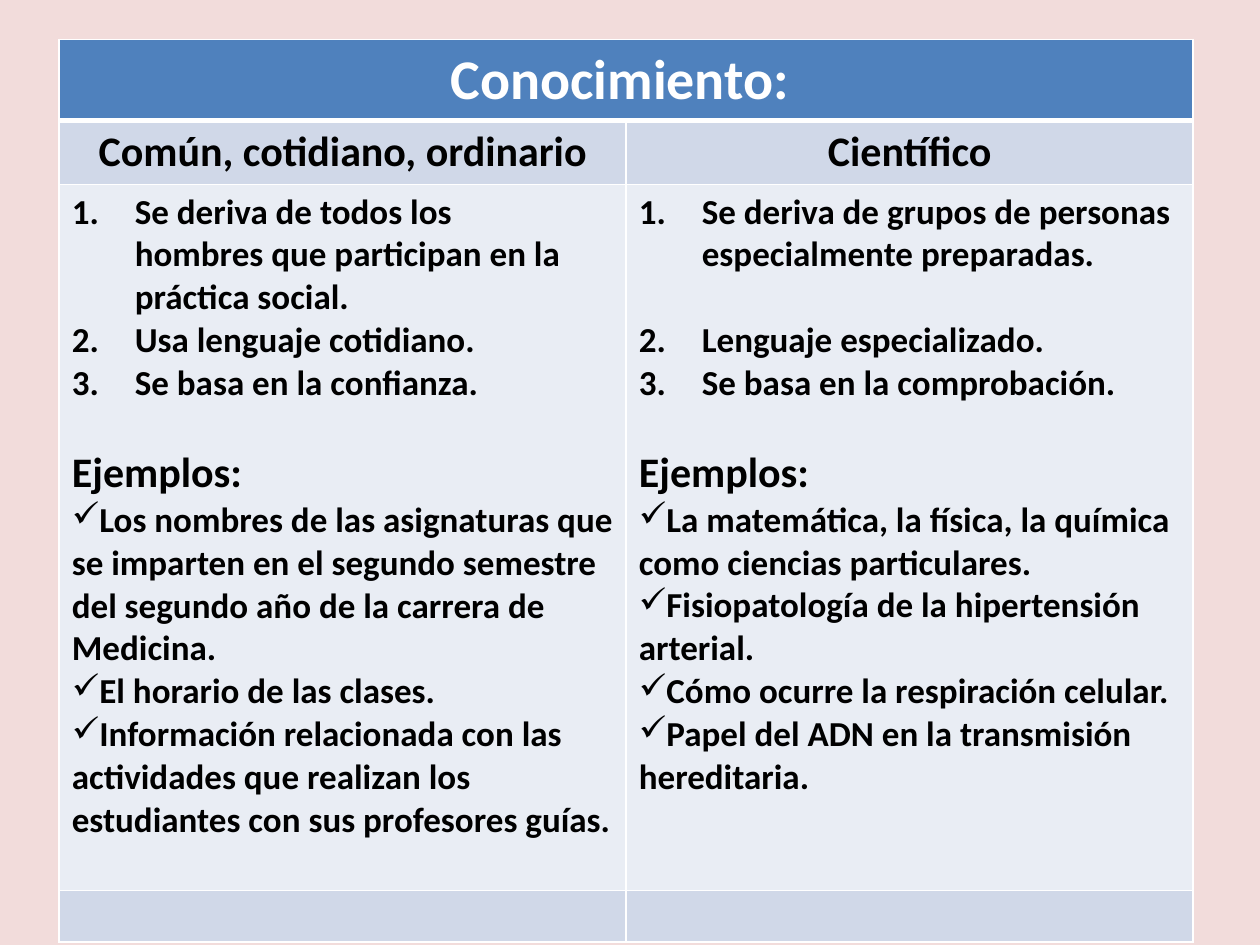
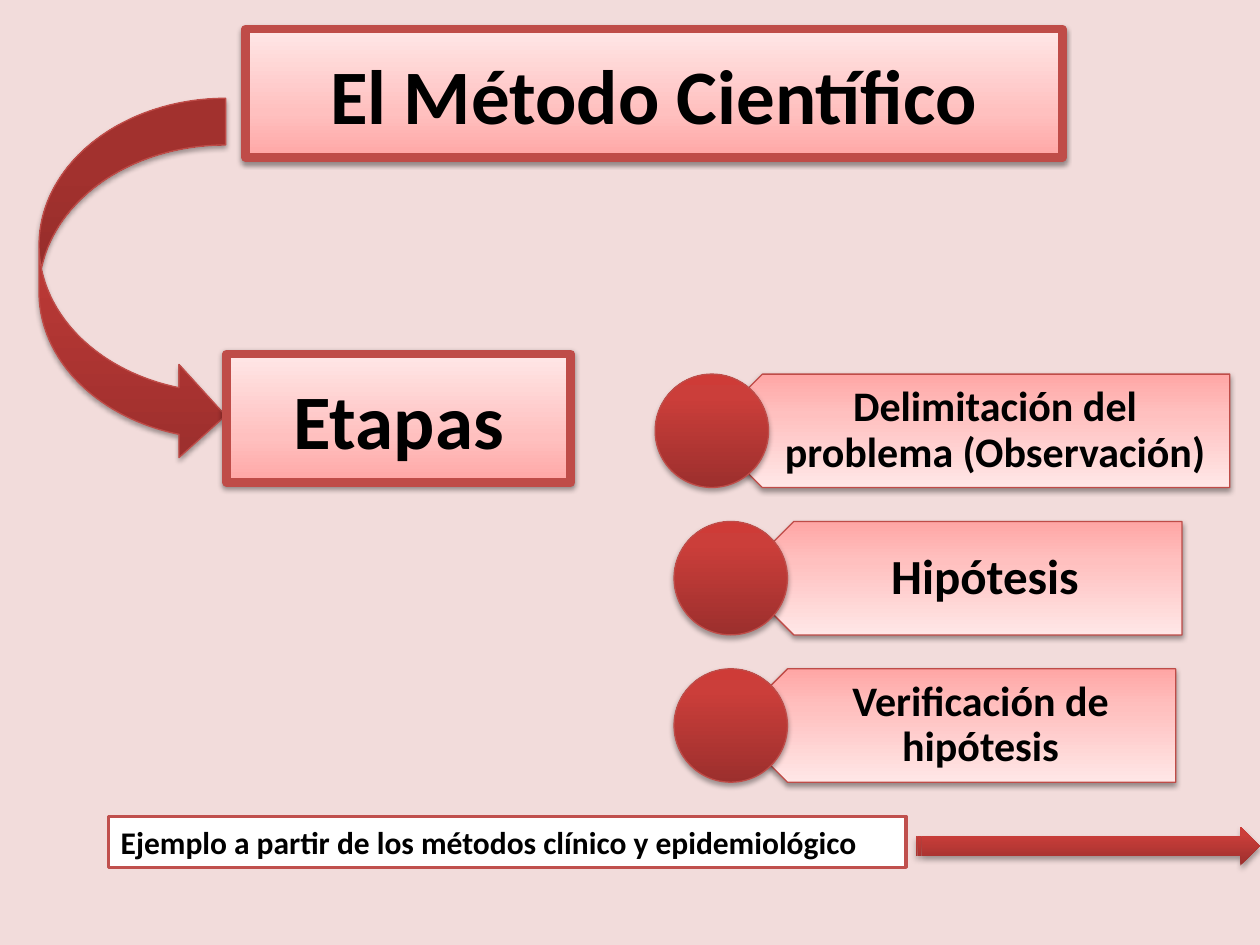
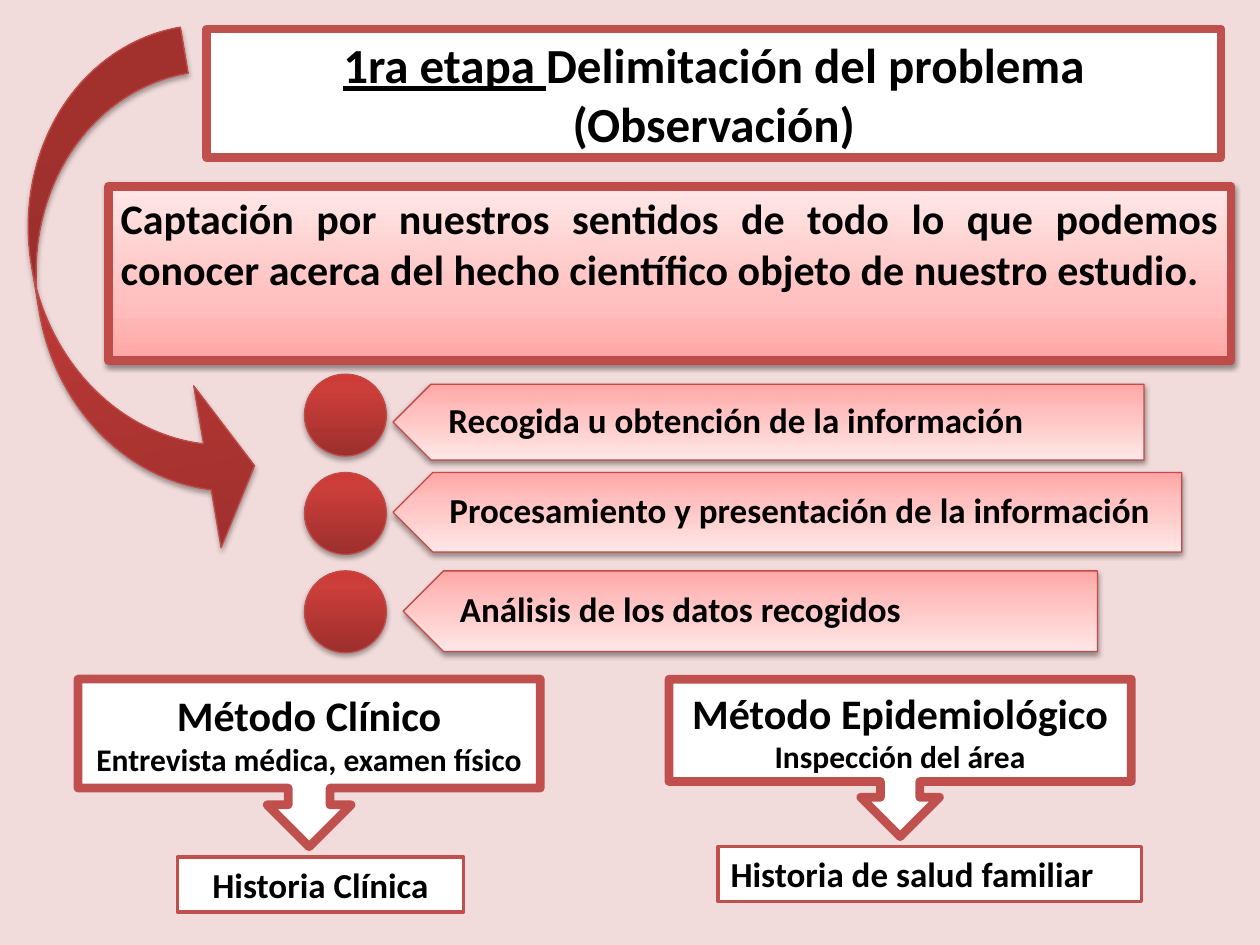
from lxml.etree import SubElement
from pptx import Presentation
from pptx.dml.color import RGBColor
from pptx.enum.shapes import MSO_SHAPE
from pptx.enum.text import MSO_ANCHOR, MSO_AUTO_SIZE, PP_ALIGN
from pptx.oxml.ns import qn
from pptx.util import Pt

COLORS = {
    "background": "F2DCDB", "text": "000000", "white": "FFFFFF",
    "edge": "BF4C48", "accent": "C0504D",
    "header": "4F81BD", "band": "D0D8E8", "body": "E9EDF4",
}
GRADIENTS = {
    "soft": [(0, "FFA6A5"), (35, "FFC0BF"), (100, "FFE7E7")],
    "deep": [(0, "9C2F2D"), (80, "CB3E3A"), (100, "CE3B37")],
}
SHADOWS = {"soft": (38, 1.6), "deep": (35, 1.8)}
FONT = "Calibri"
TITLE_ONLY, BLANK = 5, 6
LINE_GAP = 24.4


def rgb(name):
    return RGBColor.from_string(COLORS[name])


class Deck:
    """Holds the shared style and the slide being built."""

    def __init__(self):
        self.presentation = Presentation()
        self.presentation.slide_width = Pt(720)
        self.presentation.slide_height = Pt(540)
        fill = self.presentation.slide_master.background.fill
        fill.solid()
        fill.fore_color.rgb = rgb("background")
        self.slide = None

    def new_slide(self, layout):
        layouts = self.presentation.slide_layouts
        self.slide = self.presentation.slides.add_slide(layouts[layout])

    def set_text(self, frame, text, sizes, align=PP_ALIGN.CENTER, color="text"):
        frame.text = text
        for paragraph, size in zip(frame.paragraphs, sizes):
            paragraph.alignment = align
            self.format_runs(paragraph, size, color)

    def format_runs(self, paragraph, size, color="text"):
        for run in paragraph.runs:
            run.font.name = FONT
            run.font.size = Pt(size)
            run.font.bold = True
            run.font.color.rgb = rgb(color)

    def paint(self, shape, look, line):
        shape.shadow.inherit = False
        if look in GRADIENTS:
            self.paint_gradient(shape, look)
        else:
            shape.fill.solid()
            shape.fill.fore_color.rgb = rgb(look)
        if line:
            shape.line.color.rgb = rgb("edge" if look in GRADIENTS else "accent")
            shape.line.width = Pt(line)
        else:
            shape.line.fill.background()

    def paint_gradient(self, shape, look):
        shape.fill.gradient()
        shape.fill.gradient_angle = 90
        properties = shape._element.spPr
        stops = properties.find(qn("a:gradFill")).find(qn("a:gsLst"))
        for stop in list(stops):
            stops.remove(stop)
        for position, color in GRADIENTS[look]:
            stop = SubElement(stops, qn("a:gs"), pos=str(position * 1000))
            SubElement(stop, qn("a:srgbClr"), val=color)
        opacity, distance = SHADOWS[look]
        shadow = SubElement(
            properties.find(qn("a:effectLst")), qn("a:outerShdw"),
            blurRad=str(Pt(3.1)), dist=str(Pt(distance)), dir="5400000", rotWithShape="0")
        color = SubElement(shadow, qn("a:srgbClr"), val=COLORS["text"])
        SubElement(color, qn("a:alpha"), val=str(opacity * 1000))

    def title(self, text, box, size, look, lead=""):
        shape = self.slide.shapes.title
        shape.left, shape.top, shape.width, shape.height = map(Pt, box)
        self.paint(shape, look, 5)
        frame = shape.text_frame
        frame.auto_size = MSO_AUTO_SIZE.NONE
        frame.vertical_anchor = MSO_ANCHOR.MIDDLE
        self.set_text(frame, lead or text, [size])
        if lead:
            paragraph = frame.paragraphs[0]
            paragraph.runs[0].font.underline = True
            paragraph.add_run().text = text
            self.format_runs(paragraph, size)

    def shape(self, kind, box, look, line=0.75, rotation=0, adjustments=()):
        shape = self.slide.shapes.add_shape(kind, *map(Pt, box))
        shape.rotation = rotation
        for index, value in enumerate(adjustments):
            shape.adjustments[index] = value
        self.paint(shape, look, line)
        return shape

    def panel(self, text, box, sizes, look="white", line=2, align=PP_ALIGN.CENTER,
              anchor=MSO_ANCHOR.TOP, kind=MSO_SHAPE.RECTANGLE):
        frame = self.shape(kind, box, look, line).text_frame
        frame.word_wrap = True
        frame.vertical_anchor = anchor
        self.set_text(frame, text, sizes, align)

    def tag(self, text, box, ball, size, align):
        left, top, width, height = box
        diameter = ball[2]
        self.shape(MSO_SHAPE.PENTAGON, box, "soft", rotation=180)
        tip = height / 4
        text_box = self.slide.shapes.add_textbox(
            Pt(left + tip), Pt(top), Pt(width - tip), Pt(height))
        frame = text_box.text_frame
        frame.word_wrap = True
        frame.vertical_anchor = MSO_ANCHOR.MIDDLE
        frame.margin_left = Pt(diameter * 0.445)
        frame.margin_right = Pt(size * 0.57)
        self.set_text(frame, text, [size], align)
        frame.paragraphs[0].line_spacing = 0.9
        self.shape(MSO_SHAPE.OVAL, (*ball, diameter), "deep")

    def table(self, box, row_heights, columns):
        table = self.slide.shapes.add_table(
            len(row_heights), columns, *map(Pt, box)).table
        for row, height in zip(table.rows, row_heights):
            row.height = Pt(height)
        return table

    def paint_cell(self, cell, fill, top=1, bottom=1):
        properties = cell._tc.get_or_add_tcPr()
        for side, width in (("L", 1), ("R", 1), ("T", top), ("B", bottom)):
            border = SubElement(properties, qn(f"a:ln{side}"), w=str(Pt(width)))
            solid = SubElement(border, qn("a:solidFill"))
            SubElement(solid, qn("a:srgbClr"), val=COLORS["white"])
        cell.fill.solid()
        cell.fill.fore_color.rgb = rgb(fill)

    def fill_list(self, frame, items):
        sizes = [24 if kind == "heading" else 20 for kind, _, _ in items]
        self.set_text(frame, "\n".join(text for _, text, _ in items), sizes, PP_ALIGN.LEFT)
        for paragraph, (kind, _, gap) in zip(frame.paragraphs, items):
            paragraph.space_before = Pt(gap)
            properties = paragraph._p.get_or_add_pPr()
            indent = Pt(36) if kind == "number" else 0
            properties.set("marL", str(indent))
            properties.set("indent", str(-indent))
            if kind == "number":
                SubElement(properties, qn("a:buAutoNum"), type="arabicPeriod")
            elif kind == "check":
                SubElement(properties, qn("a:buChar"), char="✓")


def build_knowledge(deck):
    deck.new_slide(BLANK)
    common = [
        ("number", "Se deriva de todos los\vhombres que participan en la práctica social.", 0),
        ("number", "Usa lenguaje cotidiano.", 0),
        ("number", "Se basa en la confianza.", 0),
        ("heading", "Ejemplos:", LINE_GAP),
        ("check", "Los nombres de las asignaturas que se imparten en el segundo "
                  "semestre del segundo año de la carrera de Medicina.", 0),
        ("check", "El horario de las clases.", 0),
        ("check", "Información relacionada con las actividades que realizan los "
                  "estudiantes con sus profesores guías.", 0),
    ]
    scientific = [
        ("number", "Se deriva de grupos de personas especialmente preparadas.", 0),
        ("number", "Lenguaje especializado.", LINE_GAP),
        ("number", "Se basa en la comprobación.", 0),
        ("heading", "Ejemplos:", LINE_GAP),
        ("check", "La matemática, la física, la química como ciencias particulares.", 0),
        ("check", "Fisiopatología de la hipertensión arterial.", 0),
        ("check", "Cómo ocurre la respiración celular.", 0),
        ("check", "Papel del ADN en la transmisión hereditaria.", 0),
    ]
    table = deck.table((33.84, 22.5, 648, 515.5), (46, 36.5, 403.5, 29.5), 2)
    for index, fill in enumerate(("header", "band", "body", "band")):
        for cell in table.rows[index].cells:
            deck.paint_cell(cell, fill, top=3 if index == 1 else 1,
                            bottom=3 if index == 0 else 1)
    table.cell(0, 0).merge(table.cell(0, 1))
    deck.set_text(table.cell(0, 0).text_frame, "Conocimiento: ", [32], color="white")
    headings = ("Común, cotidiano, ordinario", "Científico")
    for column, (heading, items) in enumerate(zip(headings, (common, scientific))):
        deck.set_text(table.cell(1, column).text_frame, heading, [24])
        deck.fill_list(table.cell(2, column).text_frame, items)


def build_method(deck):
    deck.new_slide(TITLE_ONLY)
    deck.title("El Método Científico", (140.4, 16.6, 466.6, 73.4), 44, "soft")
    stages = (
        ("Delimitación del problema (Observación)", 403.2, 299.5, 374.4, 24),
        ("Hipótesis", 421.2, 254.2, 385.2, 28),
        ("Verificación de hipótesis", 417.6, 254.2, 385.2, 24),
    )
    for index, (text, left, width, ball_left, size) in enumerate(stages):
        top = 213.8 + 84.2 * index
        deck.tag(text, (left, top, width, 64.8), (ball_left, top, 64.8), size,
                 PP_ALIGN.CENTER)
    deck.shape(MSO_SHAPE.CURVED_RIGHT_ARROW, (22.3, 56.2, 106.6, 208), "deep",
               adjustments=(0.25, 0.5, 0.25))
    deck.panel("Etapas", (129.6, 202.3, 196.6, 73.4), [44], "soft", 5,
               anchor=MSO_ANCHOR.MIDDLE)
    deck.panel("Ejemplo a partir de los métodos clínico y epidemiológico",
               (61.9, 466.6, 455.8, 29), [18], align=PP_ALIGN.LEFT)
    deck.shape(MSO_SHAPE.STRIPED_RIGHT_ARROW, (523.4, 472.3, 196.6, 22.3), "deep", line=0)


def build_observation(deck):
    deck.new_slide(TITLE_ONLY)
    deck.title("Delimitación del problema (Observación)", (118.1, 16.6, 579.6, 73.4),
               28, "white", lead="1ra etapa ")
    deck.panel("Captación por nuestros sentidos de todo lo que podemos conocer acerca "
               "del hecho científico objeto de nuestro estudio.",
               (61.9, 106.6, 641.5, 99.4), [24], "soft", 5, PP_ALIGN.JUSTIFY)
    steps = (
        ("Recogida u obtención de la información", (224.6, 219.6, 429.1, 43.2)),
        ("Procesamiento y presentación de la información", (224.6, 270, 450.7, 45.4)),
        ("Análisis de los datos recogidos", (230.4, 326.2, 396.7, 46.1)),
    )
    for index, (text, box) in enumerate(steps):
        deck.tag(text, box, (174, 213.8 + 56.2 * index, 46.8), 20, PP_ALIGN.LEFT)
    deck.shape(MSO_SHAPE.CURVED_RIGHT_ARROW, (22.3, 22.3, 106.6, 301), "deep",
               rotation=350.4, adjustments=(0.25, 0.88, 0.25))
    methods = (
        ("Método Clínico\nEntrevista médica, examen físico",
         (44.6, 388.1, 264.2, 95.8), MSO_ANCHOR.MIDDLE),
        ("Método Epidemiológico\nInspección del área",
         (382.3, 388.1, 264.2, 90), MSO_ANCHOR.BOTTOM),
    )
    for text, box, anchor in methods:
        deck.panel(text, box, [24, 18], line=5, anchor=anchor,
                   kind=MSO_SHAPE.DOWN_ARROW_CALLOUT)
    deck.panel("Historia Clínica", (101.5, 489.6, 163.4, 31.5), [20])
    deck.panel("Historia de salud familiar", (410.4, 483.8, 241.9, 31.5), [20],
               align=PP_ALIGN.LEFT)


def main():
    deck = Deck()
    build_knowledge(deck)
    build_method(deck)
    build_observation(deck)
    deck.presentation.save("out.pptx")


if __name__ == "__main__":
    main()
